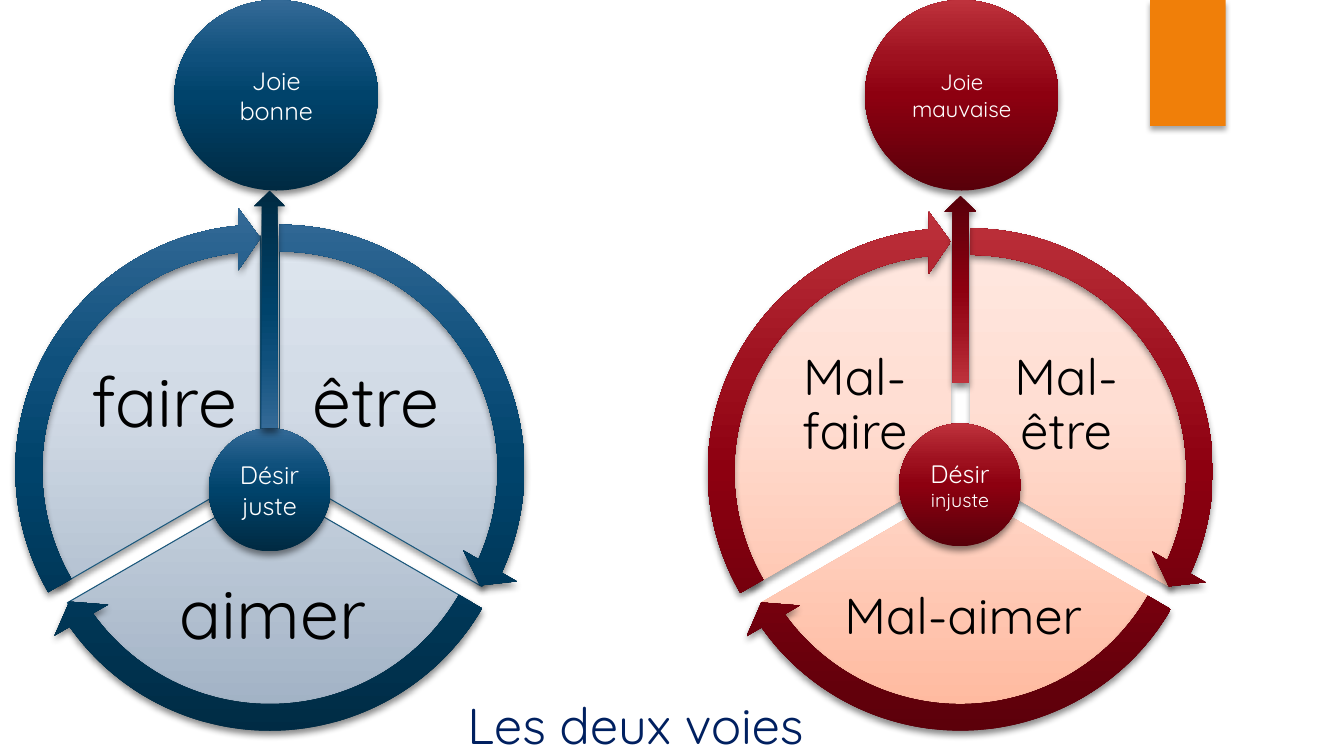
from lxml import etree
from pptx import Presentation
from pptx.dml.color import RGBColor
from pptx.enum import shapes, text
from pptx.oxml import ns
from pptx.util import Pt

FONT = "Quicksand"
COLORS = {"black": "000000", "white": "FFFFFF", "title": "002060",
          "accent": "F07F09", "slice line": "1B587C"}
# Gradients run from bottom to top: (percent, colour)
GRADIENTS = {
    "blue": [(0, "002A42"), (50, "00436B"), (70, "0F507C"), (100, "346A97")],
    "red": [(0, "58000A"), (50, "8D0010"), (70, "9E111F"), (100, "BE323C")],
    "pale blue": [(0, "A0B1C4"), (65, "D2DBE6"), (100, "DEE6EF")],
    "pale red": [(0, "FFB99E"), (65, "FFDED3"), (100, "FFE8E0")],
}
SOFT_SHADOW = (35, 4)  # opacity percent, blur
DEEP_SHADOW = (45, 5)

# All boxes are left, top, width, height in points
WHEELS = [
    dict(tone="blue", center=(192.8, 347), pie=334, ring=375.1,
         labels=["être", "aimer", "faire"], size=50, inset=5, outline="slice line",
         hub=([("Désir juste", 18)], (149, 306, 87.1, 87.8)),
         joy=([("Joie bonne", 18)], (124.6, 0, 145.4, 136.1)),
         arrow=(181.4, 136.1, 22.3, 169.9)),
    dict(tone="red", center=(686, 348.3), pie=331.2, ring=372.2,
         labels=["Mal-être", "Mal-aimer", "Mal- faire"], size=36, inset=3.6, outline=None,
         hub=([("Désir ", 18), ("injuste", 14)], (642.2, 302.4, 87.1, 87.8)),
         joy=([("Joie mauvaise", 16)], (617.8, 0, 138.2, 136.1)),
         arrow=(674.6, 139.7, 23, 133.9)),
]
# Each third: offset from the wheel centre, pie angles in degrees,
# arrow end and start adjustments, label offset, label size
THIRDS = [
    ((6.8, -11.5), (270, 30), (14.725, 161.994), (75.5, -58), (118.8, 99)),
    ((0, 0), (30, 150), (86.72, 18.005), (2, 93.4), (178.6, 87.1)),
    ((-6.8, -11.5), (150, 270), (158.73, 90), (-75.5, -58), (118.8, 99)),
]


def centered(center, offset, size):
    return (center[0] + offset[0] - size[0] / 2,
            center[1] + offset[1] - size[1] / 2, *size)


def add_form(page, kind, box, gradient=None, solid=None, shadow=SOFT_SHADOW,
             outline=None, adjust=()):
    form = page.shapes.add_shape(kind, *map(Pt, box))
    for index, value in enumerate(adjust):
        form.adjustments[index] = value
    if gradient:
        form.fill.gradient()
        form.fill.gradient_angle = 90
        stops = form.element.spPr.find(".//" + ns.qn("a:gsLst"))
        for stop in list(stops):
            stops.remove(stop)
        for percent, color in GRADIENTS[gradient]:
            stop = etree.SubElement(stops, ns.qn("a:gs"), pos=str(percent * 1000))
            etree.SubElement(stop, ns.qn("a:srgbClr"), val=color)
    else:
        form.fill.solid()
        form.fill.fore_color.rgb = RGBColor.from_string(COLORS[solid])
    if outline:
        form.line.color.rgb = RGBColor.from_string(COLORS[outline])
        form.line.width = Pt(0.75)
    else:
        form.line.fill.background()
    # Shadow falling straight down
    form.shadow.inherit = False
    opacity, blur = shadow
    effects = form.element.spPr.find(ns.qn("a:effectLst"))
    cast = etree.SubElement(effects, ns.qn("a:outerShdw"), blurRad=str(Pt(blur)),
                            dist=str(Pt(3)), dir="5400000", rotWithShape="0")
    tint = etree.SubElement(cast, ns.qn("a:srgbClr"), val=COLORS["black"])
    etree.SubElement(tint, ns.qn("a:alpha"), val=str(opacity * 1000))
    return form


def write(shape, spans, color="white", inset=None, spacing=None):
    frame = shape.text_frame
    frame.word_wrap = True
    frame.auto_size = text.MSO_AUTO_SIZE.NONE
    frame.vertical_anchor = text.MSO_ANCHOR.MIDDLE
    if inset is not None:
        frame.margin_left = frame.margin_right = Pt(inset)
        frame.margin_top = frame.margin_bottom = Pt(inset)
    para = frame.paragraphs[0]
    para.alignment = text.PP_ALIGN.CENTER
    if spacing:
        para.line_spacing = spacing
    for words, size in spans:
        span = para.add_run()
        span.text = words
        span.font.name = FONT
        span.font.size = Pt(size)
        span.font.color.rgb = RGBColor.from_string(COLORS[color])


def add_wheel(page, wheel):
    kinds = shapes.MSO_SHAPE
    tone, center = wheel["tone"], wheel["center"]
    # Slices and their labels
    for label, (offset, angles, _, place, size) in zip(wheel["labels"], THIRDS):
        add_form(page, kinds.PIE, centered(center, offset, (wheel["pie"],) * 2),
                 gradient="pale " + tone, outline=wheel["outline"],
                 adjust=[angle * 0.6 for angle in angles])
        box = page.shapes.add_textbox(*map(Pt, centered(center, place, size)))
        write(box, [(label, wheel["size"])], color="black",
              inset=wheel["inset"], spacing=0.9)
    # Ring of arrows
    for offset, _, (end, start), _, _ in THIRDS:
        add_form(page, kinds.CIRCULAR_ARROW,
                 centered(center, offset, (wheel["ring"],) * 2), gradient=tone,
                 shadow=DEEP_SHADOW, adjust=[0.051, 3.275, end, start, 0.059])
    # Desire at the hub, joy above, arrow between them
    for spans, box in (wheel["hub"], wheel["joy"]):
        write(add_form(page, kinds.OVAL, box, gradient=tone, shadow=DEEP_SHADOW), spans)
    arrow = add_form(page, kinds.DOWN_ARROW, wheel["arrow"], gradient=tone,
                     shadow=DEEP_SHADOW)
    arrow.rotation = 180


def main():
    deck = Presentation()
    deck.slide_width, deck.slide_height = Pt(960), Pt(540)
    page = deck.slides.add_slide(deck.slide_layouts[5])
    # Title
    title = page.shapes.title
    title.left, title.top, title.width, title.height = map(Pt, (106.6, 495.4, 694.8, 44.6))
    write(title, [("Les deux voies", 36)], color="title")
    # Corner tab
    add_form(page, shapes.MSO_SHAPE.RECTANGLE, (821.5, 0, 54, 90), solid="accent")
    for wheel in WHEELS:
        add_wheel(page, wheel)
    deck.save("out.pptx")


if __name__ == "__main__":
    main()
